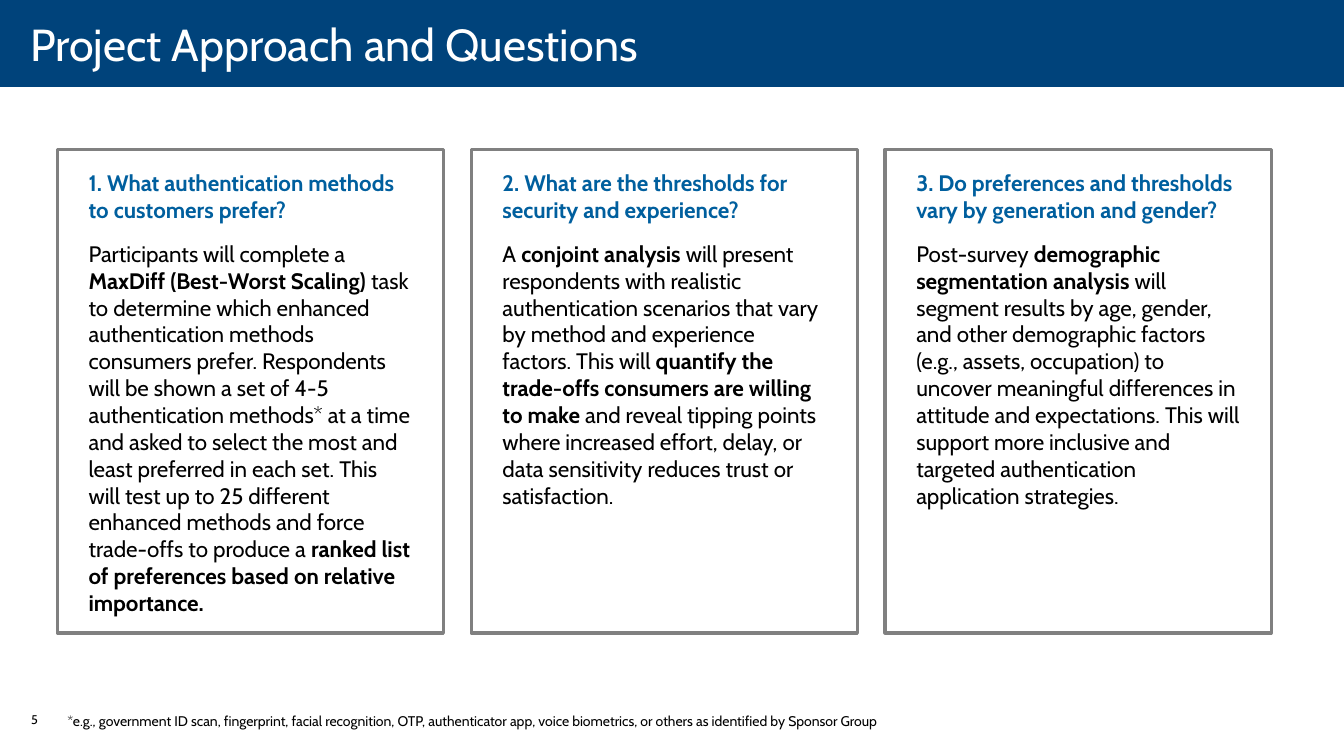
import pptx
import pptx.dml.color
import pptx.enum.shapes
import pptx.enum.text
import pptx.oxml.ns
import pptx.util
from lxml import etree

Pt = pptx.util.Pt
Anchor = pptx.enum.text.MSO_ANCHOR
Align = pptx.enum.text.PP_ALIGN

WIDTH, HEIGHT = 960, 540
NAVY, BLUE, GRAY, BLACK, WHITE = "00437B", "005F9E", "808080", "000000", "FFFFFF"


def color(value):
    return pptx.dml.color.RGBColor.from_string(value)


def set_values(target, values):
    for name, value in values.items():
        setattr(target, name, value)


class SlideBuilder:
    """Holds the style and the current slide."""

    font_name = "Cabin"

    def __init__(self, page):
        self.page = page

    def frame(self, shape, insets, anchor=Anchor.TOP, wrap=True):
        sides = ("margin_left", "margin_top", "margin_right", "margin_bottom")
        values = dict(zip(sides, map(Pt, insets)))
        set_values(shape.text_frame, {**values, "word_wrap": wrap, "vertical_anchor": anchor})
        return shape.text_frame

    def add_spans(self, para, spans, size, ink):
        """Add (text, bold) spans to a paragraph."""
        para.alignment = Align.LEFT
        for text, bold in spans:
            span = para.add_run()
            span.text = text
            set_values(span.font, {"name": self.font_name, "size": Pt(size), "bold": bold})
            span.font.color.rgb = color(ink)

    def rectangle(self, place, fill, line=None, width=0, opacity=100):
        shape = self.page.shapes.add_shape(
            pptx.enum.shapes.MSO_SHAPE.RECTANGLE, *map(Pt, place))
        shape.shadow.inherit = False
        shape.fill.solid()
        shape.fill.fore_color.rgb = color(fill)
        if opacity < 100:
            tint = shape.element.spPr.find(".//" + pptx.oxml.ns.qn("a:srgbClr"))
            etree.SubElement(tint, pptx.oxml.ns.qn("a:alpha"), val=str(opacity * 1000))
        if line:
            shape.line.color.rgb = color(line)
            shape.line.width = Pt(width)
        else:
            shape.line.fill.background()
        return shape

    def label(self, place, text, size, ink=BLACK, insets=(7.2, 3.6, 7.2, 3.6), **layout):
        box = self.page.shapes.add_textbox(*map(Pt, place))
        frame = self.frame(box, insets, **layout)
        self.add_spans(frame.paragraphs[0], [(text, False)], size, ink)

    def card(self, place, heading, body):
        shape = self.rectangle(place, WHITE, GRAY, 2.25, opacity=40)
        frame = self.frame(shape, (22.3, 14.4, 21.6, 14.4))
        parts = ((frame.paragraphs[0], [(heading, True)], BLUE),
                 (frame.add_paragraph(), body, BLACK))
        for para, spans, ink in parts:
            para.space_after = Pt(12)
            self.add_spans(para, spans, 16, ink)


CARDS = [
    ("1. What authentication methods to customers prefer?", [
        ("Participants will complete a ", False),
        ("MaxDiff (Best-Worst Scaling) ", True),
        ("task to determine which enhanced authentication methods consumers prefer. "
         "Respondents will be shown a set of 4-5 authentication methods* at a time and "
         "asked to select the most and least preferred in each set. This will test up to "
         "25 different enhanced methods and force trade-offs to produce a ", False),
        ("ranked list of preferences based on relative importance.", True)]),
    ("2. What are the thresholds for security and experience?", [
        ("A ", False),
        ("conjoint analysis ", True),
        ("will present respondents with realistic authentication scenarios that vary by "
         "method and experience factors. This will ", False),
        ("quantify the trade-offs consumers are willing to make ", True),
        ("and reveal tipping points where increased effort, delay, or data sensitivity "
         "reduces trust or satisfaction.", False)]),
    ("3. Do preferences and thresholds vary by generation and gender?", [
        ("Post-survey ", False),
        ("demographic segmentation analysis ", True),
        ("will segment results by age, gender, and other demographic factors (e.g., assets, "
         "occupation) to uncover meaningful differences in attitude and expectations. This "
         "will support more inclusive and targeted authentication application strategies.",
         False)]),
]
CARD_LEFT, CARD_TOP, CARD_WIDTH, CARD_HEIGHT, CARD_PITCH = 41, 106.6, 275.8, 345.6, 295.6


def main():
    deck = pptx.Presentation()
    set_values(deck, {"slide_width": Pt(WIDTH), "slide_height": Pt(HEIGHT)})
    builder = SlideBuilder(deck.slides.add_slide(deck.slide_layouts[6]))

    # Title band
    builder.rectangle((0, 0, WIDTH, 62), NAVY)
    builder.label((0, -3.6, WIDTH, 69.8), "Project Approach and Questions", 32, WHITE,
                  insets=(21.6, 0, 14.4, 0), anchor=Anchor.MIDDLE)

    # Question cards
    for index, (heading, body) in enumerate(CARDS):
        left = CARD_LEFT + index * CARD_PITCH
        builder.card((left, CARD_TOP, CARD_WIDTH, CARD_HEIGHT), heading, body)

    # Page number and footnote
    builder.label((15.1, 504.7, 35.3, 28.8), "5", 9)
    builder.label((41, 505.4, 653, 19.4),
                  "*e.g., government ID scan, fingerprint, facial recognition, OTP, "
                  "authenticator app, voice biometrics, or others as identified by "
                  "Sponsor Group", 10)

    deck.save("out.pptx")


if __name__ == "__main__":
    main()
